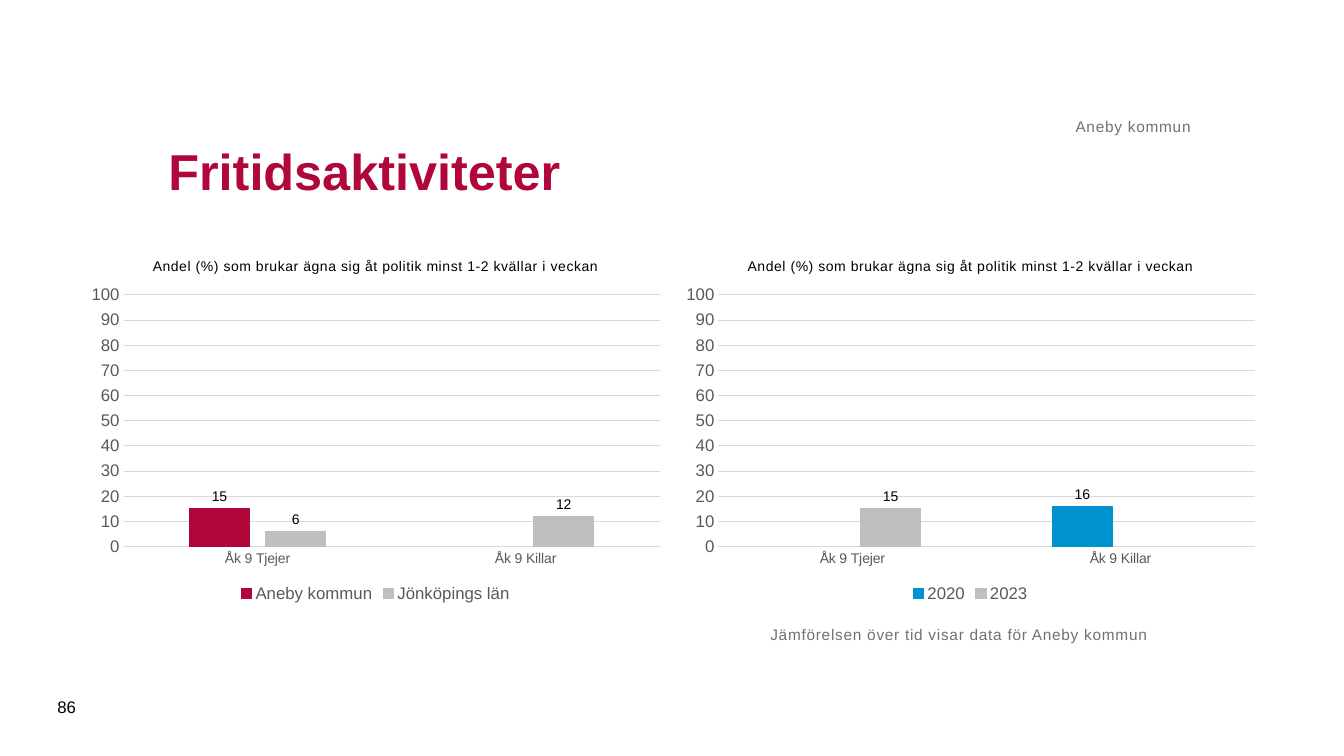
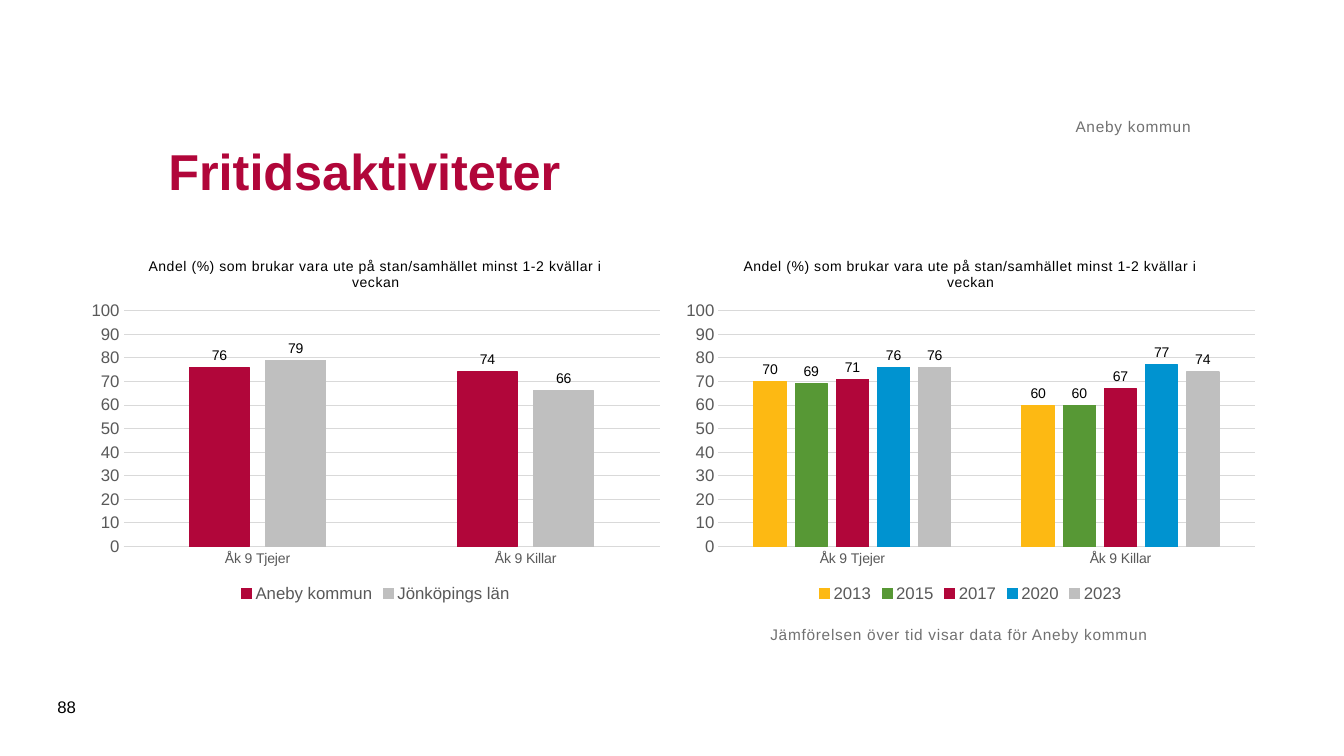
from dataclasses import dataclass
from typing import Optional

import pptx
import pptx.chart.data
import pptx.dml.color
import pptx.enum.chart
import pptx.enum.text
import pptx.util

Inches = pptx.util.Inches
Pt = pptx.util.Pt
RGBColor = pptx.dml.color.RGBColor
Align = pptx.enum.text.PP_ALIGN
Anchor = pptx.enum.text.MSO_ANCHOR

FONT = "Arial"
CRIMSON = RGBColor(0xB1, 0x06, 0x3A)
SILVER = RGBColor(0xBF, 0xBF, 0xBF)
BLUE = RGBColor(0x00, 0x93, 0xD0)
YELLOW = RGBColor(0xFD, 0xB9, 0x13)
GREEN = RGBColor(0x57, 0x98, 0x35)
BLACK = RGBColor(0x00, 0x00, 0x00)
AXIS_TEXT = RGBColor(0x59, 0x59, 0x59)
GRID = RGBColor(0xD9, 0xD9, 0xD9)
NOTE_TEXT = RGBColor(0x71, 0x71, 0x71)

TITLE = "Fritidsaktiviteter"
MUNICIPALITY = "Aneby kommun"
COUNTY = "Jönköpings län"
TIME_NOTE = "Jämförelsen över tid visar data för Aneby kommun"
GRADES = ("Åk 9 Tjejer", "Åk 9 Killar")
NUMBER_FORMAT = "#,##0;#,##0"

TITLE_ONLY_LAYOUT = 5
CHART_LEFTS = (0.79, 6.69)
CHART_TOP, CHART_WIDTH, CHART_HEIGHT = 2.4, 5.87, 3.62
LETTER_SPACING = 50  # hundredths of a point


@dataclass(frozen=True)
class Series:
    name: str
    girls: Optional[int]
    boys: Optional[int]
    color: RGBColor


@dataclass(frozen=True)
class ActivityPage:
    number: int
    question: str
    by_area: tuple[Series, ...]
    by_year: tuple[Series, ...]


@dataclass(frozen=True)
class TextStyle:
    size: float
    color: RGBColor
    bold: bool = False
    spacing: int = 0


TITLE_STYLE = TextStyle(36, CRIMSON, bold=True)
NOTE_STYLE = TextStyle(11, NOTE_TEXT, spacing=LETTER_SPACING)
NUMBER_STYLE = TextStyle(12, BLACK)
QUESTION_STYLE = TextStyle(10, BLACK, spacing=LETTER_SPACING)
LABEL_STYLE = TextStyle(10, BLACK)
CATEGORY_STYLE = TextStyle(10, AXIS_TEXT)
SCALE_STYLE = TextStyle(12, AXIS_TEXT)

PAGES = (
    ActivityPage(
        86,
        "Andel (%) som brukar ägna sig åt politik minst 1-2 kvällar i veckan",
        (Series(MUNICIPALITY, 15, None, CRIMSON), Series(COUNTY, 6, 12, SILVER)),
        (Series("2020", None, 16, BLUE), Series("2023", 15, None, SILVER)),
    ),
    ActivityPage(
        88,
        "Andel (%) som brukar vara ute på stan/samhället minst 1-2 kvällar i veckan",
        (Series(MUNICIPALITY, 76, 74, CRIMSON), Series(COUNTY, 79, 66, SILVER)),
        (
            Series("2013", 70, 60, YELLOW),
            Series("2015", 69, 60, GREEN),
            Series("2017", 71, 67, CRIMSON),
            Series("2020", 76, 77, BLUE),
            Series("2023", 76, 74, SILVER),
        ),
    ),
)


def apply_font(font, style: TextStyle) -> None:
    font.name = FONT
    font.size = Pt(style.size)
    font.bold = style.bold
    font.color.rgb = style.color


def write_text(frame, text: str, style: TextStyle, align=Align.LEFT) -> None:
    frame.text = text
    paragraph = frame.paragraphs[0]
    paragraph.alignment = align
    run = paragraph.runs[0]
    apply_font(run.font, style)
    if style.spacing:
        run._r.get_or_add_rPr().set("spc", str(style.spacing))


def add_text(slide, box, text: str, style: TextStyle, align=Align.LEFT,
             anchor=Anchor.TOP, inset: bool = True) -> None:
    frame = slide.shapes.add_textbox(*map(Inches, box)).text_frame
    frame.word_wrap = True
    frame.vertical_anchor = anchor
    if not inset:
        frame.margin_left = frame.margin_right = 0
        frame.margin_top = frame.margin_bottom = 0
    write_text(frame, text, style, align)


def add_title(slide) -> None:
    title = slide.shapes.title
    title.left, title.top = Inches(1.57), Inches(0.98)
    title.width, title.height = Inches(10.24), Inches(1.42)
    title.text_frame.vertical_anchor = Anchor.MIDDLE
    write_text(title.text_frame, TITLE, TITLE_STYLE)


def set_line(line, color: RGBColor) -> None:
    line.color.rgb = color
    line.width = Pt(0.75)


def format_axes(chart) -> None:
    no_ticks = pptx.enum.chart.XL_TICK_MARK.NONE
    for axis, style in ((chart.category_axis, CATEGORY_STYLE),
                        (chart.value_axis, SCALE_STYLE)):
        axis.major_tick_mark = axis.minor_tick_mark = no_ticks
        apply_font(axis.tick_labels.font, style)
    set_line(chart.category_axis.format.line, GRID)

    scale = chart.value_axis
    scale.minimum_scale, scale.maximum_scale, scale.major_unit = 0, 100, 10
    scale.tick_labels.number_format = NUMBER_FORMAT
    scale.tick_labels.number_format_is_linked = False
    scale.format.line.fill.background()
    set_line(scale.major_gridlines.format.line, GRID)


def format_columns(plot, series_list: tuple[Series, ...]) -> None:
    plot.gap_width, plot.overlap = 219, -27
    plot.vary_by_categories = False
    for columns, series in zip(plot.series, series_list):
        columns.format.fill.solid()
        columns.format.fill.fore_color.rgb = series.color
        set_line(columns.format.line, series.color)
        labels = columns.data_labels
        labels.show_value = True
        labels.position = pptx.enum.chart.XL_LABEL_POSITION.OUTSIDE_END
        labels.number_format = NUMBER_FORMAT
        labels.number_format_is_linked = False
        apply_font(labels.font, LABEL_STYLE)


def add_column_chart(slide, left: float, question: str,
                     series_list: tuple[Series, ...]) -> None:
    data = pptx.chart.data.CategoryChartData()
    data.categories = GRADES
    for series in series_list:
        data.add_series(series.name, (series.girls, series.boys))
    chart = slide.shapes.add_chart(
        pptx.enum.chart.XL_CHART_TYPE.COLUMN_CLUSTERED,
        Inches(left), Inches(CHART_TOP), Inches(CHART_WIDTH), Inches(CHART_HEIGHT),
        data,
    ).chart
    apply_font(chart.font, LABEL_STYLE)
    write_text(chart.chart_title.text_frame, question, QUESTION_STYLE, Align.CENTER)

    chart.has_legend = True
    chart.legend.position = pptx.enum.chart.XL_LEGEND_POSITION.BOTTOM
    chart.legend.include_in_layout = False
    apply_font(chart.legend.font, SCALE_STYLE)

    format_axes(chart)
    format_columns(chart.plots[0], series_list)


def add_activity_page(deck, page: ActivityPage) -> None:
    slide = deck.slides.add_slide(deck.slide_layouts[TITLE_ONLY_LAYOUT])
    for left, series_list in zip(CHART_LEFTS, (page.by_area, page.by_year)):
        add_column_chart(slide, left, page.question, series_list)
    add_title(slide)
    add_text(slide, (1.57, 0.62, 10.24, 0.73), MUNICIPALITY, NOTE_STYLE,
             Align.RIGHT, Anchor.BOTTOM, inset=False)
    add_text(slide, (0.47, 6.81, 0.57, 0.4), str(page.number), NUMBER_STYLE,
             anchor=Anchor.MIDDLE)
    add_text(slide, (7.64, 6.2, 5.31, 0.94), TIME_NOTE, NOTE_STYLE, inset=False)


def main() -> None:
    deck = pptx.Presentation()
    deck.slide_width, deck.slide_height = Inches(13.33), Inches(7.5)
    for page in PAGES:
        add_activity_page(deck, page)
    deck.save("out.pptx")


if __name__ == "__main__":
    main()
